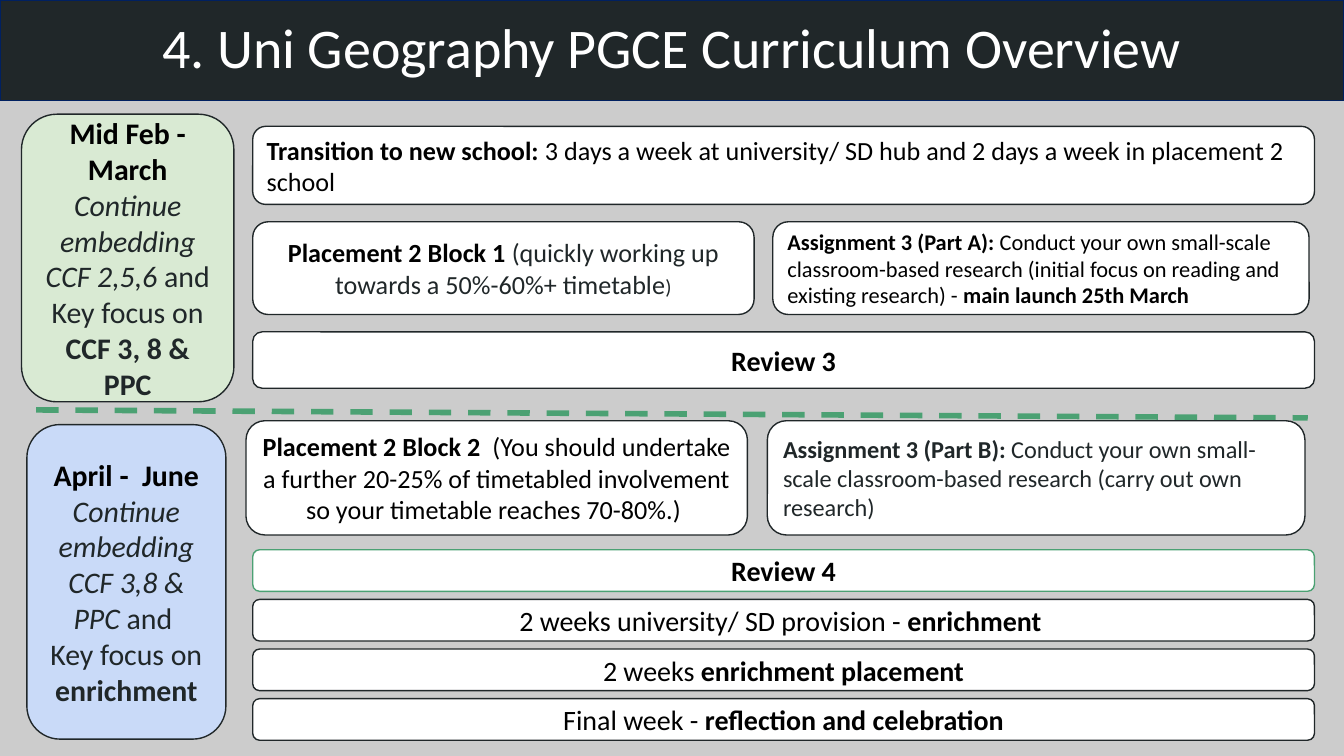
from lxml import etree
from pptx import Presentation
from pptx.dml.color import RGBColor
from pptx.enum import dml, shapes, text
from pptx.oxml import ns
from pptx.util import Pt

INK, BLACK, WHITE, GREEN = "202729", "000000", "FFFFFF", "4BA173"
LEFT, MID = text.PP_ALIGN.LEFT, text.PP_ALIGN.CENTER


def color(code):
    return RGBColor.from_string(code)


def paint(shape, fill, edge):
    shape.fill.solid()
    shape.fill.fore_color.rgb = color(fill)
    shape.line.color.rgb = color(edge)
    shape.line.width = Pt(0.75)


def pad(frame, side, top):
    frame.word_wrap = True
    frame.vertical_anchor = text.MSO_ANCHOR.MIDDLE
    frame.margin_left = frame.margin_right = Pt(side)
    frame.margin_top = frame.margin_bottom = Pt(top)


def style(run, size, code, marks=""):
    run.font.name = "Calibri"
    run.font.size = Pt(size)
    run.font.color.rgb = color(code)
    run.font.bold = "b" in marks
    run.font.italic = "i" in marks


def card(slide, box, lines, size, align=MID, fill=WHITE, edge=INK):
    shape = slide.shapes.add_shape(
        shapes.MSO_SHAPE.ROUNDED_RECTANGLE, *map(Pt, box))
    shape.shadow.inherit = False
    paint(shape, fill, edge)
    frame = shape.text_frame
    pad(frame, 5.4, 5.4)
    for i, line in enumerate(lines):
        para = frame.add_paragraph() if i else frame.paragraphs[0]
        para.alignment = align
        for words, marks, code, *small in line:
            run = para.add_run()
            run.text = words
            style(run, small[0] if small else size, code, marks)


def header(slide, box):
    title = slide.shapes.title
    title.left, title.top, title.width, title.height = map(Pt, box)
    paint(title, INK, "002060")
    frame = title.text_frame
    frame.text = "4. Uni Geography PGCE Curriculum Overview"
    frame.auto_size = text.MSO_AUTO_SIZE.NONE
    pad(frame, 5.4, 2.7)
    para = frame.paragraphs[0]
    para.alignment = MID
    para.line_spacing = 0.9
    style(para.runs[0], 30, WHITE)


def spring(slide, box):
    x, y, w, h = box
    card(slide, (x, y, 113.8, h), [
        [("Mid Feb - March", "b", BLACK)],
        [("Continue embedding CCF 2,5,6", "i", INK),
         (" and Key focus on ", "", INK),
         ("CCF 3, 8 & PPC", "b", INK)]], 16, fill="D9EAD3")
    left, wide = x + 123.9, w - 123.9
    card(slide, (left, y + 6.5, wide, 41.8), [
        [("Transition to new school:", "b", BLACK),
         (" 3 days a week at university/ SD hub and 2 days a week"
          " in placement 2 school", "", BLACK)]], 14, LEFT)
    card(slide, (left, y + 57.6, 268.6, 49.7), [
        [("Placement 2 Block 1 ", "b", BLACK),
         ("(quickly working up towards a 50%-60%+ timetable", "", INK),
         (")", "", INK, 11)]], 14)
    card(slide, (left + 278.6, y + 57.6, 287.3, 49.7), [
        [("Assignment 3 (Part A):", "b", BLACK),
         (" Conduct your own small-scale classroom-based research (initial"
          " focus on reading and existing research) - ", "", BLACK),
         ("main launch 25th March", "b", BLACK)]], 12, LEFT)
    card(slide, (left, y + 116.6, wide, 30.2),
         [[("Review 3", "b", BLACK)]], 15)


def summer(slide, box):
    x, y, w, h = box
    card(slide, (x, y + 2.1, 106.6, h - 2.1), [
        [("April -  June", "b", BLACK)],
        [("Continue embedding CCF 3,8 & PPC ", "i", INK),
         ("and ", "", INK)],
        [("Key focus on ", "", INK), ("enrichment", "b", INK)]],
        16, fill="C9DAF8")
    card(slide, (x + 117.4, y, 268.6, 61.2), [
        [("Placement 2 Block 2 ", "b", BLACK),
         (" (You should undertake a further 20-25% of timetabled involvement"
          " so your timetable reaches 70-80%.) ", "", BLACK)]], 14)
    card(slide, (x + 396.7, y, 288, 61.2), [
        [("Assignment 3 (Part B):", "b", INK),
         (" Conduct your own small-scale classroom-based research"
          " (carry out own research)", "", INK)]], 13, LEFT)
    rows = [
        ([("Review 4", "b", BLACK)], GREEN),
        ([("2 weeks university/ SD provision - ", "", BLACK),
          ("enrichment ", "b", BLACK)], INK),
        ([("2 weeks ", "", BLACK),
          ("enrichment placement", "b", BLACK)], INK),
        ([("Final week - ", "", BLACK),
          ("reflection and celebration", "b", BLACK)], INK)]
    for i, (line, edge) in enumerate(rows):
        spot = (x + 121, y + 69.1 + i * 26.6, w - 121, 22.3)
        card(slide, spot, [line], 15, edge=edge)


def divide(slide, box):
    x, y, w, h = box
    rule = slide.shapes.add_connector(
        shapes.MSO_CONNECTOR.STRAIGHT, Pt(x), Pt(y), Pt(x + w), Pt(y + h))
    rule.line.color.rgb = color(GREEN)
    rule.line.width = Pt(3)
    rule.line.dash_style = dml.MSO_LINE.DASH
    etree.SubElement(rule._element.spPr, ns.qn("a:effectLst"))


def main():
    deck = Presentation()
    deck.slide_width, deck.slide_height = Pt(720), Pt(405)
    slide = deck.slides.add_slide(deck.slide_layouts[5])
    slide.background.fill.solid()
    slide.background.fill.fore_color.rgb = color("CCCCCC")
    header(slide, (0, 0, 720, 54))
    spring(slide, (11.5, 61.2, 692.7, 154.1))
    divide(slide, (19.4, 219.6, 681.2, 4.3))
    summer(slide, (14.4, 225.4, 689.8, 170.6))
    deck.save("out.pptx")


if __name__ == "__main__":
    main()
